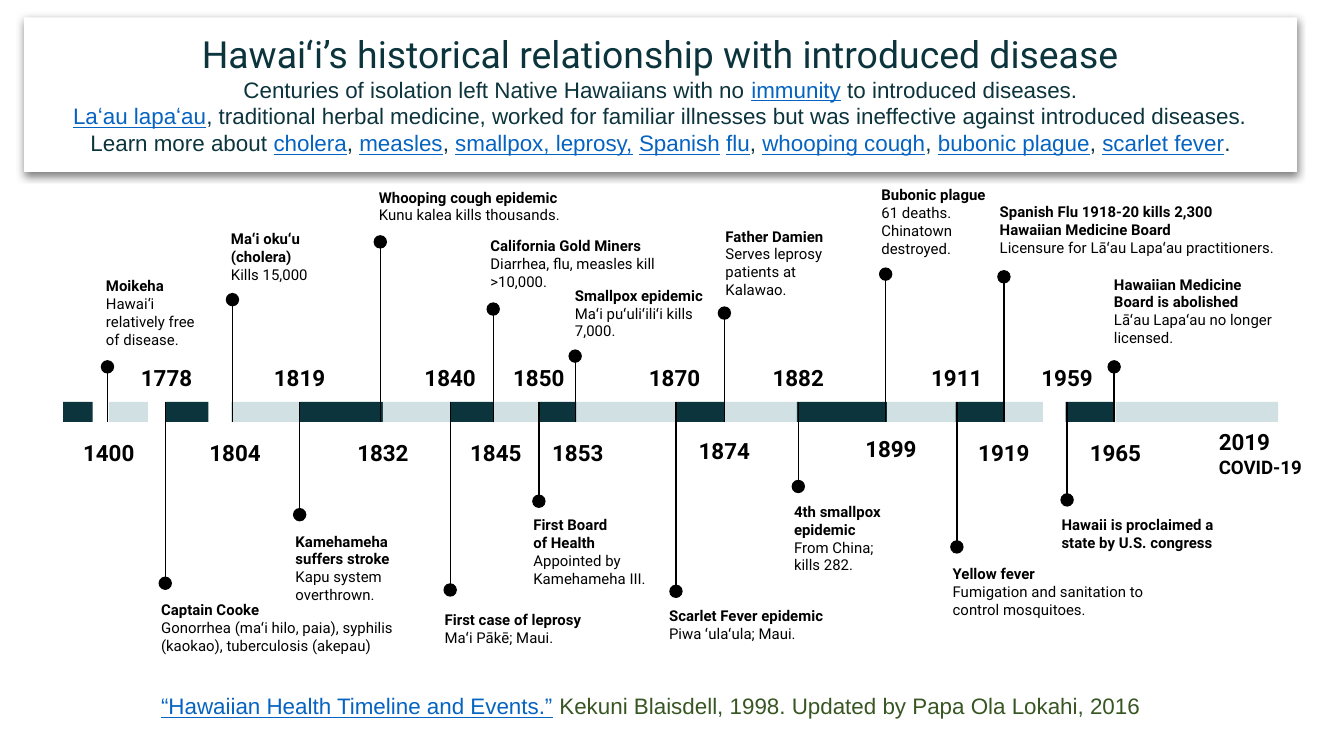
from lxml import etree
from pptx import Presentation
from pptx.dml.color import RGBColor
from pptx.enum.shapes import MSO_CONNECTOR, MSO_SHAPE
from pptx.enum.text import MSO_ANCHOR, PP_ALIGN
from pptx.oxml import parse_xml
from pptx.oxml.ns import nsdecls, qn
from pptx.util import Inches, Pt

BLACK = RGBColor(0x00, 0x00, 0x00)
WHITE = RGBColor(0xFF, 0xFF, 0xFF)
DARK = RGBColor(0x0C, 0x34, 0x3D)
LIGHT = RGBColor(0xD0, 0xE0, 0xE3)
LINK = RGBColor(0x05, 0x63, 0xC1)
GREEN = RGBColor(0x38, 0x56, 0x23)
TOP, BOTTOM = MSO_ANCHOR.TOP, MSO_ANCHOR.BOTTOM

# Content; in the rich lines every second part between bars is a link
TITLE = "Hawaiʻi’s historical relationship with introduced disease"
INTRO = [
    "Centuries of isolation left Native Hawaiians with no |immunity| to introduced diseases.",
    "|Laʻau lapaʻau|, traditional herbal medicine, worked for familiar illnesses "
    "but was ineffective against introduced diseases.",
    "Learn more about |cholera|, |measles|, |smallpox, leprosy,| |Spanish| |flu|, "
    "|whooping cough|, |bubonic plague|, |scarlet fever|.",
]
SOURCE = ("|“Hawaiian Health Timeline and Events.”| Kekuni Blaisdell, 1998. "
          "Updated by Papa Ola Lokahi, 2016")

# Timeline pieces (left, right), alternately dark and light
BANDS = [
    (0.47, 0.69), (0.81, 1.1), (1.23, 1.55), (1.72, 2.23), (2.23, 2.85), (2.85, 3.35),
    (3.35, 3.67), (3.67, 4.01), (4.01, 4.29), (4.29, 5.03), (5.03, 5.39), (5.39, 5.93),
    (5.93, 6.6), (6.6, 7.11), (7.11, 7.47), (7.47, 7.76), (7.93, 8.29), (8.3, 9.51),
]

# year, year centre, stem x, dot centre y, label box, anchor, bold lines, plain lines
EVENTS = [
    ("1400", 0.81, 0.8, 2.73, (0.69, 1.96, 0.94, 0.72), TOP,
     ["Moikeha"], ["Hawai‘i relatively free of disease."]),
    ("1778", 1.24, 1.23, 4.34, (1.1, 4.43, 2.21, 0.54), BOTTOM,
     ["Captain Cooke"],
     ["Gonorrhea (maʻi hilo, paia), syphilis (kaokao), tuberculosis (akepau)"]),
    ("1804", 1.75, 1.73, 2.23, (1.62, 1.61, 1.14, 0.48), TOP,
     ["Maʻi okuʻu (cholera)"], ["Kills 15,000"]),
    ("1819", 2.23, 2.23, 3.83, (2.1, 3.86, 1.21, 0.48), TOP,
     ["Kamehameha suffers stroke"], ["Kapu system overthrown."]),
    ("1832", 2.85, 2.83, 1.8, (2.72, 1.3, 1.82, 0.41), TOP,
     ["Whooping cough epidemic"], ["Kunu kalea kills thousands."]),
    ("1840", 3.35, 3.35, 4.39, (3.21, 4.5, 1.29, 0.41), BOTTOM,
     ["First case of leprosy"], ["Maʻi Pākē; Maui."]),
    ("1845", 3.69, 3.67, 2.3, (3.55, 1.66, 1.71, 0.41), TOP,
     ["California Gold Miners"], ["Diarrhea, flu, measles kill >10,000."]),
    ("1850", 4.01, 4.01, 3.73, (3.87, 3.93, 1.08, 0.54), BOTTOM,
     ["First Board", "of Health"], ["Appointed by Kamehameha III."]),
    ("1853", 4.3, 4.28, 2.65, (4.18, 2.03, 1.16, 0.48), TOP,
     ["Smallpox epidemic"], ["Maʻi puʻuliʻiliʻi kills 7,000."]),
    ("1870", 5.02, 5.03, 4.4, (4.88, 4.4, 1.41, 0.48), BOTTOM,
     ["Scarlet Fever epidemic"], ["Piwa ʻulaʻula; Maui."]),
    ("1874", 5.39, 5.39, 2.33, (5.3, 1.59, 1.03, 0.68), TOP,
     ["Father Damien"], ["Serves leprosy patients at Kalawao."]),
    ("1882", 5.94, 5.94, 3.62, (5.81, 3.89, 1, 0.48), BOTTOM,
     ["4th smallpox epidemic"], ["From China; kills 282."]),
    ("1899", 6.63, 6.59, 2.04, (6.46, 1.28, 1.07, 0.48), TOP,
     ["Bubonic plague"], ["61 deaths.", "Chinatown destroyed."]),
    ("1911", 7.12, 7.12, 4.07, (6.99, 4.14, 1.8, 0.56), BOTTOM,
     ["Yellow fever"], ["Fumigation and sanitation to control mosquitoes."]),
    ("1919", 7.47, 7.47, 2.06, (7.34, 1.41, 2.31, 0.7), TOP,
     ["Spanish Flu 1918-20 kills 2,300", "Hawaiian Medicine Board"],
     ["Licensure for Lāʻau Lapaʻau practitioners."]),
    ("1959", 7.94, 7.94, 3.72, (7.8, 3.74, 1.49, 0.44), TOP,
     ["Hawaii is proclaimed a state by U.S. congress"], []),
    ("1965", 8.3, 8.29, 2.73, (8.19, 2.1, 1.41, 0.58), BOTTOM,
     ["Hawaiian Medicine Board is abolished"], ["Lāʻau Lapaʻau no longer licensed."]),
]
YEAR_NUDGE = {"1874": -0.02, "1899": -0.03}

BAND_TOP, BAND_BOTTOM = 2.99, 3.14
YEAR_W, YEAR_H = 0.8, 0.41
DOT = 0.1

# Widescreen slide, 16:9
prs = Presentation()
prs.slide_width = Inches(10)
prs.slide_height = Inches(10 * 9 / 16)
s = prs.slides.add_slide(prs.slide_layouts[6])


def add_box(kind, x, y, w, h, color):
    sp = s.shapes.add_shape(kind, Inches(x), Inches(y), Inches(w), Inches(h))
    sp.shadow.inherit = False
    sp.fill.solid()
    sp.fill.fore_color.rgb = color
    sp.line.fill.background()
    return sp


def set_frame(tf, anchor=TOP, inset=0.1):
    tf.word_wrap = True
    tf.vertical_anchor = anchor
    tf.margin_left = tf.margin_right = Inches(0.1)
    tf.margin_top = tf.margin_bottom = Inches(inset)


def add_run(p, text, size, color=BLACK, font="Roboto", bold=False, underline=False):
    r = p.add_run()
    r.text = text
    r.font.size, r.font.name = Pt(size), font
    r.font.bold, r.font.underline = bold, underline
    r.font.color.rgb = color


def add_rich(p, line, color):
    for i, part in enumerate(line.split("|")):
        if part:
            linked = i % 2 == 1
            add_run(p, part, 12, LINK if linked else color, "Arial", underline=linked)


def add_text(box, lines, anchor=TOP, inset=0.1):
    """Add a text box; lines holds (text, size, bold)."""
    tf = s.shapes.add_textbox(*map(Inches, box)).text_frame
    set_frame(tf, anchor, inset)
    for i, (text, size, bold) in enumerate(lines):
        p = tf.paragraphs[0] if i == 0 else tf.add_paragraph()
        add_run(p, text, size, bold=bold)
    return tf


# Timeline band
for i, (left, right) in enumerate(BANDS):
    add_box(MSO_SHAPE.RECTANGLE, left, BAND_TOP, right - left, BAND_BOTTOM - BAND_TOP,
            LIGHT if i % 2 else DARK)

# Events: stem, dot, year on the far side of the band, label
for year, year_x, x, dot_y, box, anchor, heads, body in EVENTS:
    above = dot_y < BAND_TOP
    end_y = BAND_BOTTOM if above else BAND_TOP
    stem = s.shapes.add_connector(MSO_CONNECTOR.STRAIGHT, Inches(x), Inches(dot_y),
                                  Inches(x), Inches(end_y))
    stem.line.color.rgb = BLACK
    stem.line.width = Pt(0.75)
    etree.SubElement(stem._element.spPr, qn("a:effectLst"))
    add_box(MSO_SHAPE.OVAL, x - DOT / 2, dot_y - DOT / 2, DOT, DOT, BLACK)

    year_y = (BAND_BOTTOM if above else BAND_TOP - YEAR_H) + YEAR_NUDGE.get(year, 0)
    tf = add_text((year_x - YEAR_W / 2, year_y, YEAR_W, YEAR_H), [(year, 12, True)])
    tf.paragraphs[0].alignment = PP_ALIGN.CENTER
    tf.paragraphs[0].line_spacing = 1.15

    add_text(box, [(t, 8, True) for t in heads] + [(t, 8, False) for t in body], anchor)

add_text((8.97, 3.14, 0.94, 0.47), [("2019", 12, True), ("COVID-19", 10, True)], inset=0.05)

# Header card with soft shadow
card = add_box(MSO_SHAPE.RECTANGLE, 0.18, 0.13, 9.47, 1.15, WHITE)
card._element.spPr.find(qn("a:effectLst")).append(parse_xml(
    f'<a:outerShdw {nsdecls("a")} blurRad="57150" dist="19050" dir="5400000" algn="bl" '
    'rotWithShape="0"><a:srgbClr val="000000"><a:alpha val="50000"/></a:srgbClr>'
    '</a:outerShdw>'))
tf = card.text_frame
set_frame(tf)
add_run(tf.paragraphs[0], TITLE, 20, DARK)
for line in INTRO:
    add_rich(tf.add_paragraph(), line, DARK)
for p in tf.paragraphs:
    p.alignment = PP_ALIGN.CENTER

# Source line
tf = add_text((1.1, 4.91, 8.77, 0.49), [], BOTTOM, 0.05)
add_rich(tf.paragraphs[0], SOURCE, GREEN)

prs.save("out.pptx")
